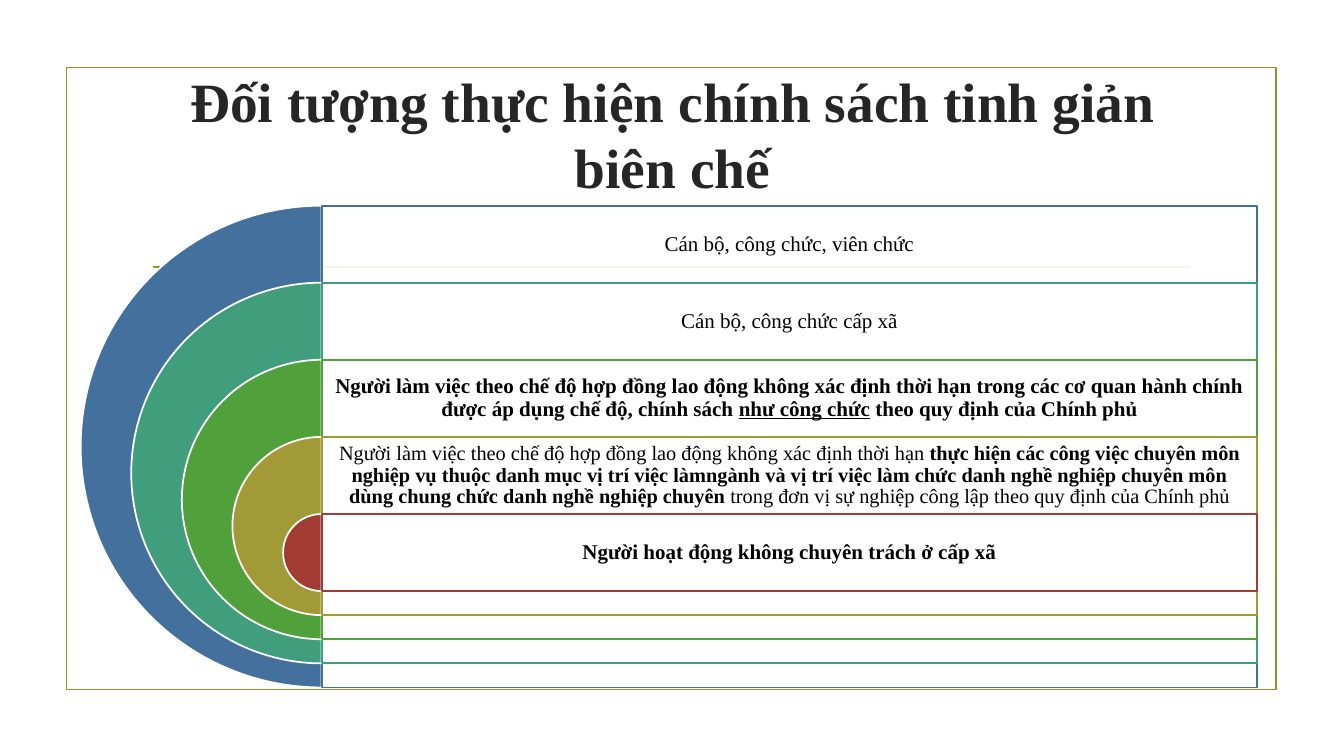
from lxml import etree
from pptx import Presentation
from pptx.dml.color import RGBColor
from pptx.enum.shapes import MSO_CONNECTOR, MSO_SHAPE
from pptx.enum.text import MSO_ANCHOR, MSO_AUTO_SIZE, PP_ALIGN
from pptx.oxml.ns import qn
from pptx.util import Inches, Pt

PIE, RECTANGLE = MSO_SHAPE.PIE, MSO_SHAPE.RECTANGLE
STRAIGHT = MSO_CONNECTOR.STRAIGHT
MIDDLE, CENTER, NO_FIT = MSO_ANCHOR.MIDDLE, PP_ALIGN.CENTER, MSO_AUTO_SIZE.NONE

FONT = "Times New Roman"
LINE_WIDTH = 1.25
SLIDE_W, SLIDE_H = 13.33, 7.5
COLORS = {
    "frame": "83992A", "title": "262626", "text": "000000", "white": "FFFFFF",
    "blue": "44709D", "teal": "409E7D", "green": "50A03B",
    "olive": "A19A37", "red": "A23C33",
}

# Each group: colour, text size, runs as (text, style)
GROUPS = [
    ("blue", 15, [("Cán bộ, công chức, viên chức", "")]),
    ("teal", 15, [("Cán bộ, công chức cấp xã", "")]),
    ("green", 15, [
        ("Người làm việc theo chế độ hợp đồng lao động không xác định thời hạn "
         "trong các cơ quan hành chính được áp dụng chế độ, chính sách ", "b"),
        ("như công chức", "bu"),
        (" theo quy định của Chính phủ", "b")]),
    ("olive", 14.5, [
        ("Người làm việc theo chế độ hợp đồng lao động không xác định thời hạn ", ""),
        ("thực hiện các công việc chuyên môn nghiệp vụ thuộc danh mục vị trí việc "
         "làmngành và vị trí việc làm chức danh nghề nghiệp chuyên môn dùng chung "
         "chức danh nghề nghiệp chuyên ", "b"),
        ("trong đơn vị sự nghiệp công lập theo quy định của Chính phủ", "")]),
    ("red", 15, [("Người hoạt động không chuyên trách ở cấp xã", "b")]),
]


def rgb(name):
    return RGBColor.from_string(COLORS[name])


def write_text(frame, runs, size, color="text", spacing=1.0, inset=None):
    """Fill a text frame with one centred paragraph of styled runs."""
    frame.word_wrap = True
    frame.auto_size = NO_FIT
    frame.vertical_anchor = MIDDLE
    if inset is not None:
        frame.margin_left = frame.margin_right = Inches(inset)
        frame.margin_top = frame.margin_bottom = Inches(inset)
    paragraph = frame.paragraphs[0]
    paragraph.alignment = CENTER
    paragraph.line_spacing = spacing
    for text, style in runs:
        run = paragraph.add_run()
        run.text = text
        font = run.font
        font.name, font.size = FONT, Pt(size)
        font.bold, font.underline = "b" in style, "u" in style
        font.color.rgb = rgb(color)


def add_outlined(slide, kind, box, line, fill=None, opacity=100):
    shape = slide.shapes.add_shape(kind, *map(Inches, box))
    shape.shadow.inherit = False
    shape.line.color.rgb = rgb(line)
    shape.line.width = Pt(LINE_WIDTH)
    if fill is None:
        shape.fill.background()
        return shape
    shape.fill.solid()
    shape.fill.fore_color.rgb = rgb(fill)
    if opacity < 100:
        tint = shape.fill._xPr.find(qn("a:solidFill"))[0]
        etree.SubElement(tint, qn("a:alpha"), val=str(opacity * 1000))
    return shape


def add_frame(slide, left, top, width, height):
    """Border around the slide with the rule that runs behind the groups."""
    add_outlined(slide, RECTANGLE, (left, top, width, height), "frame")
    rule_y, indent = Inches(top + 1.98), 0.86
    rule = slide.shapes.add_connector(
        STRAIGHT, Inches(left + indent), rule_y,
        Inches(left + width - indent), rule_y)
    rule.line.color.rgb = rgb("frame")
    rule.line.width = Pt(LINE_WIDTH)
    etree.SubElement(rule._element.spPr, qn("a:effectLst"))


def add_title(slide, left, top, width, height):
    title = slide.shapes.title
    title.left, title.top = Inches(left), Inches(top)
    title.width, title.height = Inches(width), Inches(height)
    write_text(title.text_frame,
               [("Đối tượng thực hiện chính sách tinh giản biên chế", "b")],
               39.6, color="title")


def add_nested_groups(slide, left, top, width, height):
    """Nested half discs, each joined to an outlined panel with its text."""
    row = height * 0.16                         # height of one text row
    shrink = (height - row) / (len(GROUPS) - 1)  # loss of diameter per ring
    axis = left + height / 2
    panel_w = width - height / 2
    for i, (color, size, runs) in enumerate(GROUPS):
        diameter = height - i * shrink
        y = top + i * row
        disc = add_outlined(
            slide, PIE, (axis - diameter / 2, y, diameter, diameter),
            "white", fill=color)
        disc.adjustments[0], disc.adjustments[1] = 54, 162
        add_outlined(slide, RECTANGLE, (axis, y, panel_w, diameter),
                     color, fill="white", opacity=90)
        label = slide.shapes.add_textbox(*map(Inches, (axis, y, panel_w, row)))
        write_text(label.text_frame, runs, size, spacing=0.9, inset=0.06)


def main():
    prs = Presentation()
    prs.slide_width, prs.slide_height = Inches(SLIDE_W), Inches(SLIDE_H)
    slide = prs.slides.add_slide(prs.slide_layouts[5])
    add_frame(slide, 0.66, 0.67, 12, 6.17)
    add_title(slide, 1.42, 0.61, 10.5, 1.43)
    add_nested_groups(slide, 0.8, 2.04, 11.67, 4.78)
    prs.save("out.pptx")


if __name__ == "__main__":
    main()
